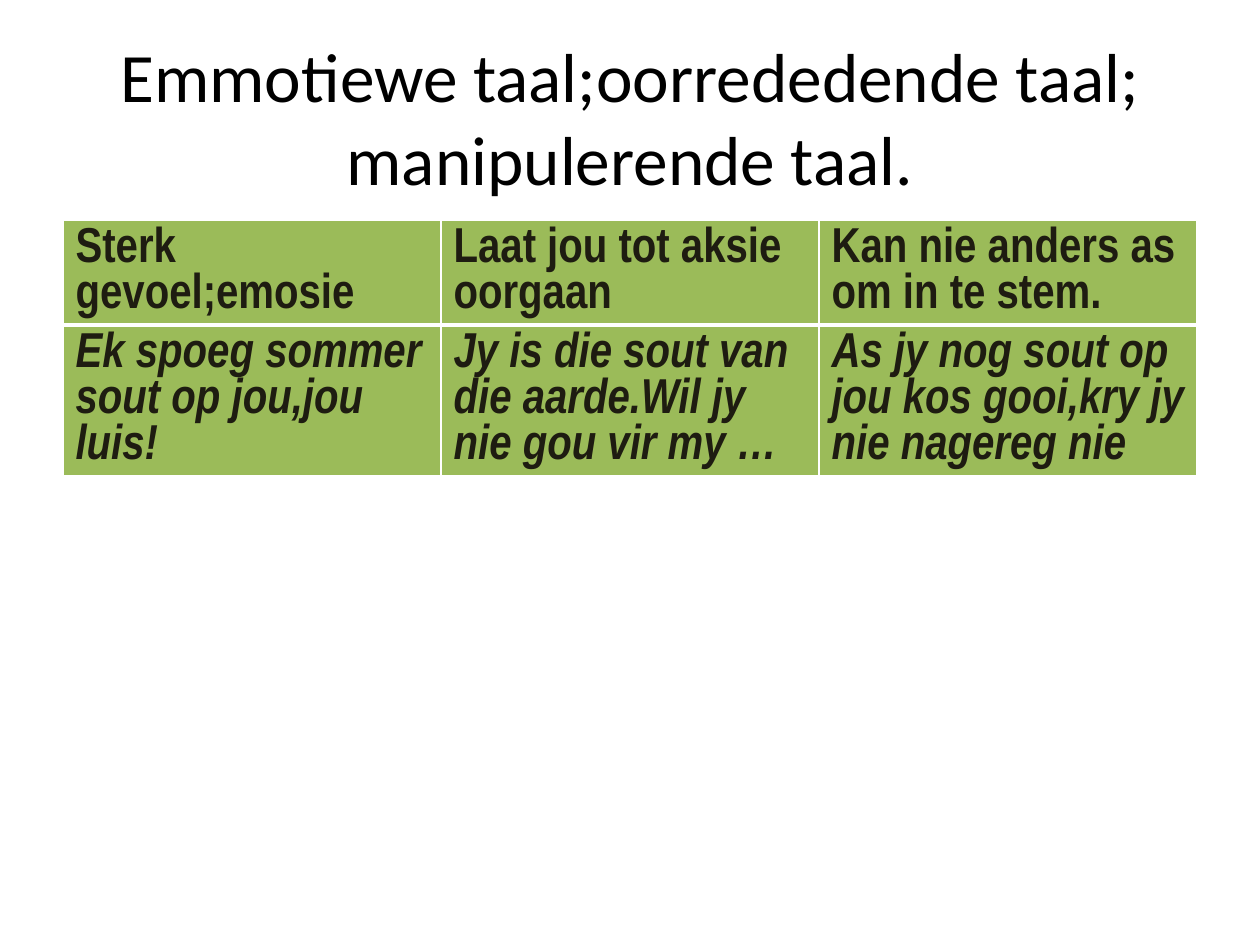
from lxml import etree
from pptx import Presentation
from pptx.dml.color import RGBColor
from pptx.enum.text import MSO_ANCHOR, PP_ALIGN
from pptx.oxml.ns import qn
from pptx.util import Inches, Pt

CENTER = PP_ALIGN.CENTER
MIDDLE = MSO_ANCHOR.MIDDLE
TITLE_ONLY = 5

COLOURS = {"title": "000000", "text": "1E1C11", "cell": "9BBB59", "border": "FFFFFF"}
TITLE = "Emmotiewe taal;oorrededende taal; manipulerende taal."
LANGUAGE_KINDS = [
    ["Sterk gevoel;emosie", "Laat jou tot aksie oorgaan", "Kan nie anders as om in te stem."],
    [
        "Ek spoeg sommer sout op jou,jou luis!",
        "Jy is die sout van die aarde.Wil jy nie gou vir my …",
        "As jy nog sout op jou kos gooi,kry jy nie nagereg nie",
    ],
]


class SlideBuilder:
    """Holds the style and the current slide, and adds elements to it."""

    def __init__(self, presentation):
        self.slide = presentation.slides.add_slide(presentation.slide_layouts[TITLE_ONLY])
        self.title_font = "Calibri"
        self.table_font = "Arial Narrow"

    def colour(self, role):
        return RGBColor.from_string(COLOURS[role])

    def format_runs(self, frame, family, size, role, bold=False, italic=False):
        for paragraph in frame.paragraphs:
            for run in paragraph.runs:
                font = run.font
                font.name, font.size = family, Pt(size)
                font.bold, font.italic = bold, italic
                font.color.rgb = self.colour(role)

    def title(self, text, left, top, width, height):
        heading = self.slide.shapes.title
        heading.left, heading.top = Inches(left), Inches(top)
        heading.width, heading.height = Inches(width), Inches(height)
        frame = heading.text_frame
        frame.text = text
        frame.word_wrap = True
        frame.vertical_anchor = MIDDLE
        frame.paragraphs[0].alignment = CENTER
        self.format_runs(frame, self.title_font, 39.6, "title")

    def borders(self, cell, widths):
        properties = cell._tc.get_or_add_tcPr()
        for position, (side, width) in enumerate(widths.items()):
            line = etree.Element(qn(f"a:ln{side}"), w=str(Pt(width)))
            fill = etree.SubElement(line, qn("a:solidFill"))
            etree.SubElement(fill, qn("a:srgbClr"), val=COLOURS["border"])
            properties.insert(position, line)

    def table(self, rows, left, top, width, row_height):
        table = self.slide.shapes.add_table(
            len(rows), len(rows[0]), Inches(left), Inches(top),
            Inches(width), Inches(row_height * len(rows)),
        ).table
        for row_index, texts in enumerate(rows):
            is_header = row_index == 0
            widths = {"L": 1, "R": 1, "T": 1 if is_header else 3, "B": 3 if is_header else 1}
            for column_index, text in enumerate(texts):
                cell = table.cell(row_index, column_index)
                cell.text_frame.text = text
                cell.fill.solid()
                cell.fill.fore_color.rgb = self.colour("cell")
                self.format_runs(
                    cell.text_frame, self.table_font, 28, "text", bold=True, italic=not is_header
                )
                self.borders(cell, widths)


def main():
    presentation = Presentation()
    presentation.slide_width, presentation.slide_height = Inches(10), Inches(7.5)
    builder = SlideBuilder(presentation)
    builder.title(TITLE, 0.5, 0.3, 9, 1.25)
    builder.table(LANGUAGE_KINDS, 0.5, 1.75, 9, 0.41)
    presentation.save("out.pptx")


if __name__ == "__main__":
    main()
